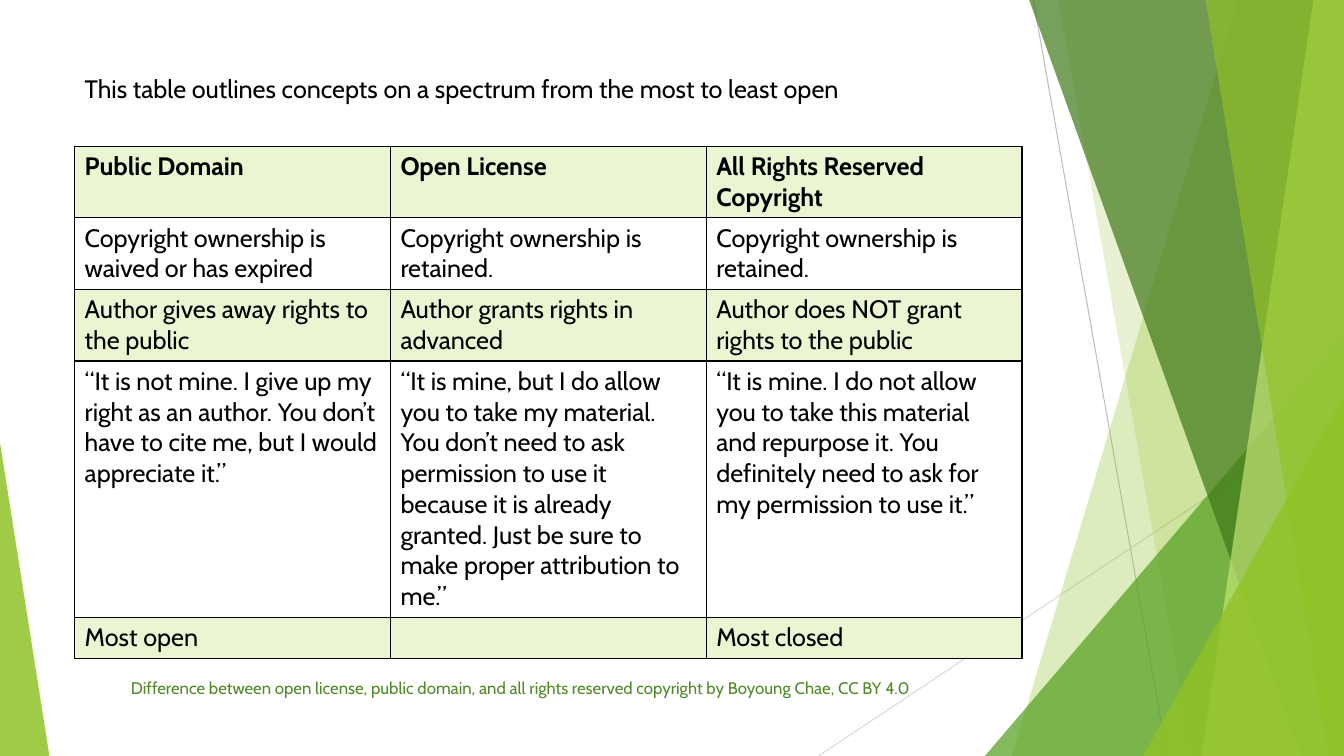
from dataclasses import dataclass

from lxml import etree
from pptx import Presentation
from pptx.dml.color import RGBColor
from pptx.enum.shapes import MSO_CONNECTOR, MSO_SHAPE
from pptx.oxml.ns import qn
from pptx.util import Emu, Inches, Pt

STRAIGHT = MSO_CONNECTOR.STRAIGHT
TRIANGLE = MSO_SHAPE.ISOSCELES_TRIANGLE
WIDTH, HEIGHT = Inches(13.333), Inches(7.5)
FONT, BLACK, WHITE = "Cabin", "000000", "FFFFFF"
PALE_GREEN, CAPTION_GREEN = "EAF6D1", "508927"


# All lengths are percentages of the slide's width or height.
@dataclass(frozen=True)
class Ray:
    start: tuple[float, float]
    end: tuple[float, float]
    color: str


@dataclass(frozen=True)
class Blade:
    """A full-height band from a slanted left side to the slide's right edge."""
    top_x: float
    bottom_x: float
    color: str
    opacity: int


@dataclass(frozen=True)
class Corner:
    """A right triangle standing on the slide's bottom edge."""
    left: float
    top: float
    width: float
    apex: int
    color: str
    opacity: int


RAYS = [
    Ray((76.88, 0), (86.85, 100), "BFBFBF"),
    Ray((100, 53.73), (60.9, 100), "D9D9D9"),
]
FACETS = [
    Blade(92.1, 75.3, "90C226", 30),
    Blade(78.75, 88.73, "90C226", 20),
    Corner(73.28, 44.4, 26.72, 1, "54A021", 72),
    Blade(76.58, 96.83, "3F7819", 70),
    Blade(97.73, 89.4, "C0E474", 70),
    Blade(89.7, 98.85, "90C226", 65),
    Corner(85.05, 52.4, 14.95, 1, "90C226", 80),
    Corner(0, 58.53, 3.68, 0, "90C226", 85),
]
TABLE_LEFT, TABLE_TOP, COLUMN_WIDTH = 5.55, 19.33, 23.5
ROW_HEIGHTS = [9.47, 9.47, 9.47, 33.87, 5.47]
ROWS = [
    ["Public Domain", "Open License", "All Rights Reserved Copyright"],
    ["Copyright ownership is waived or has expired",
     "Copyright ownership is retained.",
     "Copyright ownership is retained."],
    ["Author gives away rights to the public",
     "Author grants rights in advanced",
     "Author does NOT grant rights to the public"],
    ["“It is not mine. I give up my right as an author. You don’t have to "
     "cite me, but I would appreciate it.”",
     "“It is mine, but I do allow you to take my material. You don’t need to "
     "ask permission to use it because it is already granted. Just be sure "
     "to make proper attribution to me.”",
     "“It is mine. I do not allow you to take this material and repurpose it. "
     "You definitely need to ask for my permission to use it.”"],
    ["Most open", "", "Most closed"],
]


def across(percent: float) -> Emu:
    return Emu(round(WIDTH * percent / 100))


def down(percent: float) -> Emu:
    return Emu(round(HEIGHT * percent / 100))


def paint(fill, color: str, opacity: int = 100) -> None:
    fill.solid()
    fill.fore_color.rgb = RGBColor.from_string(color)
    if opacity < 100:
        color_element = fill._xPr.find(qn("a:solidFill"))[0]
        alpha = etree.SubElement(color_element, qn("a:alpha"))
        alpha.set("val", str(opacity * 1000))


def write(text_frame, text: str, *, size: float = 18, color: str = BLACK,
          bold: bool = False) -> None:
    text_frame.word_wrap = True
    run = text_frame.paragraphs[0].add_run()
    run.text = text
    run.font.name, run.font.size, run.font.bold = FONT, Pt(size), bold
    run.font.color.rgb = RGBColor.from_string(color)


def draw_ray(slide, ray: Ray) -> None:
    connector = slide.shapes.add_connector(
        STRAIGHT, across(ray.start[0]), down(ray.start[1]),
        across(ray.end[0]), down(ray.end[1]))
    paint(connector.line.fill, ray.color)
    connector.line.width = Pt(0.75)
    etree.SubElement(connector._element.spPr, qn("a:effectLst"))


def draw_facet(slide, facet: Blade | Corner) -> None:
    if isinstance(facet, Blade):
        builder = slide.shapes.build_freeform(across(facet.top_x), 0)
        builder.add_line_segments([
            (WIDTH, 0), (WIDTH, HEIGHT), (across(facet.bottom_x), HEIGHT)])
        shape = builder.convert_to_shape()
    else:
        shape = slide.shapes.add_shape(
            TRIANGLE, across(facet.left), down(facet.top),
            across(facet.width), down(100 - facet.top))
        shape.adjustments[0] = facet.apex
    paint(shape.fill, facet.color, facet.opacity)
    shape.line.fill.background()
    shape.shadow.inherit = False


def outline_cell(cell) -> None:
    properties = cell._tc.get_or_add_tcPr()
    for position, side in enumerate(("a:lnL", "a:lnR", "a:lnT", "a:lnB")):
        border = etree.Element(qn(side), w=str(Pt(1)))
        fill = etree.SubElement(border, qn("a:solidFill"))
        etree.SubElement(fill, qn("a:srgbClr"), val=BLACK)
        properties.insert(position, border)


def draw_table(slide) -> None:
    columns = len(ROWS[0])
    table = slide.shapes.add_table(
        len(ROWS), columns, across(TABLE_LEFT), down(TABLE_TOP),
        across(COLUMN_WIDTH * columns), down(sum(ROW_HEIGHTS))).table
    for column in table.columns:
        column.width = across(COLUMN_WIDTH)
    for row_index, texts in enumerate(ROWS):
        table.rows[row_index].height = down(ROW_HEIGHTS[row_index])
        for column_index, text in enumerate(texts):
            cell = table.cell(row_index, column_index)
            paint(cell.fill, WHITE if row_index % 2 else PALE_GREEN)
            outline_cell(cell)
            if text:
                write(cell.text_frame, text, bold=row_index == 0)


def draw_text(slide, text: str, left: float, top: float, width: float,
              height: float, **text_format) -> None:
    box = slide.shapes.add_textbox(
        across(left), down(top), across(width), down(height))
    write(box.text_frame, text, **text_format)


def main() -> None:
    presentation = Presentation()
    presentation.slide_width, presentation.slide_height = WIDTH, HEIGHT
    slide = presentation.slides.add_slide(presentation.slide_layouts[6])
    paint(slide.background.fill, WHITE)

    # Green facets behind the content
    for ray in RAYS:
        draw_ray(slide, ray)
    for facet in FACETS:
        draw_facet(slide, facet)

    # Introduction, table and attribution
    draw_table(slide)
    draw_text(slide, "This table outlines concepts on a spectrum from the most "
              "to least open", TABLE_LEFT, 9.07, 70.5, 5.33)
    draw_text(slide, "Difference between open license, public domain, and all "
              "rights reserved copyright by Boyoung Chae, CC BY 4.0",
              9, 88.93, 63.68, 4, size=12, color=CAPTION_GREEN)
    presentation.save("out.pptx")


if __name__ == "__main__":
    main()
